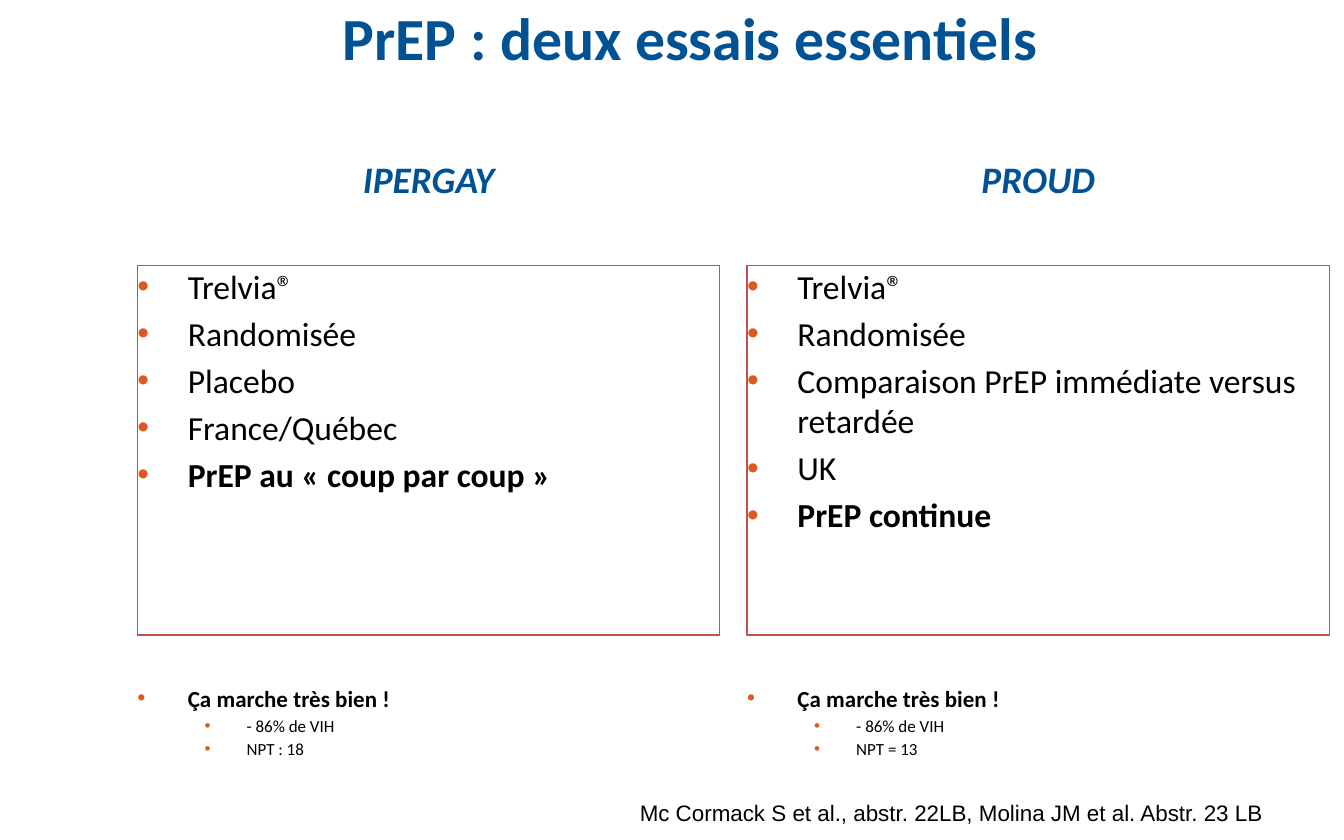
from pptx import Presentation
from pptx.dml.color import RGBColor
from pptx.enum.shapes import MSO_SHAPE as Shape
from pptx.enum.text import MSO_ANCHOR as Anchor, MSO_AUTO_SIZE as AutoSize, PP_ALIGN as Align
from pptx.oxml.ns import qn
from pptx.util import Pt
from lxml.etree import SubElement

BLUE, RED, ORANGE, BLACK = "005294", "C0504D", "DC5A20", "000000"
COLUMN_LEFT, COLUMN_STEP, COLUMN_WIDTH = 73.6, 326.6, 312

# One entry per trial: name, design points, results
TRIALS = [
    ("IPERGAY",
     ["Trelvia®", "Randomisée", "Placebo", "France/Québec", "PrEP au « coup par coup »"],
     ["Ça marche très bien !", "- 86% de VIH", "NPT : 18"]),
    ("PROUD",
     ["Trelvia®", "Randomisée", "Comparaison PrEP immédiate versus retardée", "UK",
      "PrEP continue"],
     ["Ça marche très bien !", "- 86% de VIH", "NPT = 13"]),
]


def color(hex_value):
    return RGBColor.from_string(hex_value)


def prepare_frame(shape, anchor=Anchor.TOP, inset=0):
    frame = shape.text_frame
    frame.word_wrap = True
    frame.auto_size = AutoSize.NONE
    frame.vertical_anchor = anchor
    frame.margin_left = frame.margin_right = Pt(inset)
    frame.margin_top = frame.margin_bottom = Pt(inset / 2)
    return frame


def add_run(paragraph, words, size, hex_value=BLACK, bold=False, italic=False, face="Calibri"):
    run = paragraph.add_run()
    run.text = words
    font = run.font
    font.name, font.size, font.bold, font.italic = face, Pt(size), bold, italic
    font.color.rgb = color(hex_value)


def add_textbox(slide, left, top, width, height, **frame_options):
    box = slide.shapes.add_textbox(Pt(left), Pt(top), Pt(width), Pt(height))
    return prepare_frame(box, **frame_options)


def add_bullets(frame, items):
    """Each item is (words, size, bold, level)."""
    for index, (words, size, bold, level) in enumerate(items):
        paragraph = frame.paragraphs[0] if index == 0 else frame.add_paragraph()
        paragraph.level = level
        paragraph.alignment = Align.LEFT
        paragraph.space_before = Pt(round(size * 0.2, 1))
        margin, hanging = ((27, 27), (58.5, 22.5))[level]
        properties = paragraph._p.get_or_add_pPr()
        properties.set("marL", str(Pt(margin)))
        properties.set("indent", str(-Pt(hanging)))
        bullet_color = SubElement(properties, qn("a:buClr"))
        SubElement(bullet_color, qn("a:srgbClr")).set("val", ORANGE)
        SubElement(properties, qn("a:buFont")).set("typeface", "Arial")
        SubElement(properties, qn("a:buChar")).set("char", "•")
        add_run(paragraph, words, size, bold=bold)


def add_title(slide, words):
    title = slide.shapes.title
    title.left, title.top, title.width, title.height = Pt(73.6), Pt(8), Pt(592.6), Pt(39.6)
    paragraph = prepare_frame(title, Anchor.MIDDLE).paragraphs[0]
    paragraph.alignment = Align.CENTER
    paragraph.line_spacing = Pt(22)
    add_run(paragraph, words, 32, BLUE, bold=True)


def add_trial(slide, left, name, design, results):
    # Trial name
    heading = add_textbox(slide, left, 83.5, COLUMN_WIDTH, 41.8).paragraphs[0]
    heading.alignment = Align.CENTER
    heading.space_before = Pt(4)
    add_run(heading, name, 20, BLUE, bold=True, italic=True)

    # Framed design points, the last one stressed
    panel = slide.shapes.add_shape(Shape.RECTANGLE, Pt(left), Pt(142.4),
                                   Pt(COLUMN_WIDTH), Pt(197.8))
    panel.shadow.inherit = False
    panel.fill.background()
    panel.line.color.rgb = color(RED)
    panel.line.width = Pt(0.75)
    add_bullets(prepare_frame(panel),
                [(words, 18, words == design[-1], 0) for words in design])

    # Results: conclusion, then figures
    conclusion, *figures = results
    add_bullets(add_textbox(slide, left, 366.5, COLUMN_WIDTH, 34.6),
                [(conclusion, 12.3, True, 0)] + [(words, 9.1, False, 1) for words in figures])


def add_reference(slide, words):
    reference = add_textbox(slide, 218.2, 419.8, 465.8, 31,
                            anchor=Anchor.MIDDLE, inset=7.2).paragraphs[0]
    reference.alignment = Align.RIGHT
    add_run(reference, words, 12, face="Arial")


def main():
    deck = Presentation()
    deck.slide_width, deck.slide_height = Pt(720), Pt(450)
    slide = deck.slides.add_slide(deck.slide_layouts[5])
    add_title(slide, "PrEP : deux essais essentiels")
    for index, trial in enumerate(TRIALS):
        add_trial(slide, COLUMN_LEFT + index * COLUMN_STEP, *trial)
    add_reference(slide, "Mc Cormack S et al., abstr. 22LB, Molina JM et al. Abstr. 23 LB")
    deck.save("out.pptx")


if __name__ == "__main__":
    main()
